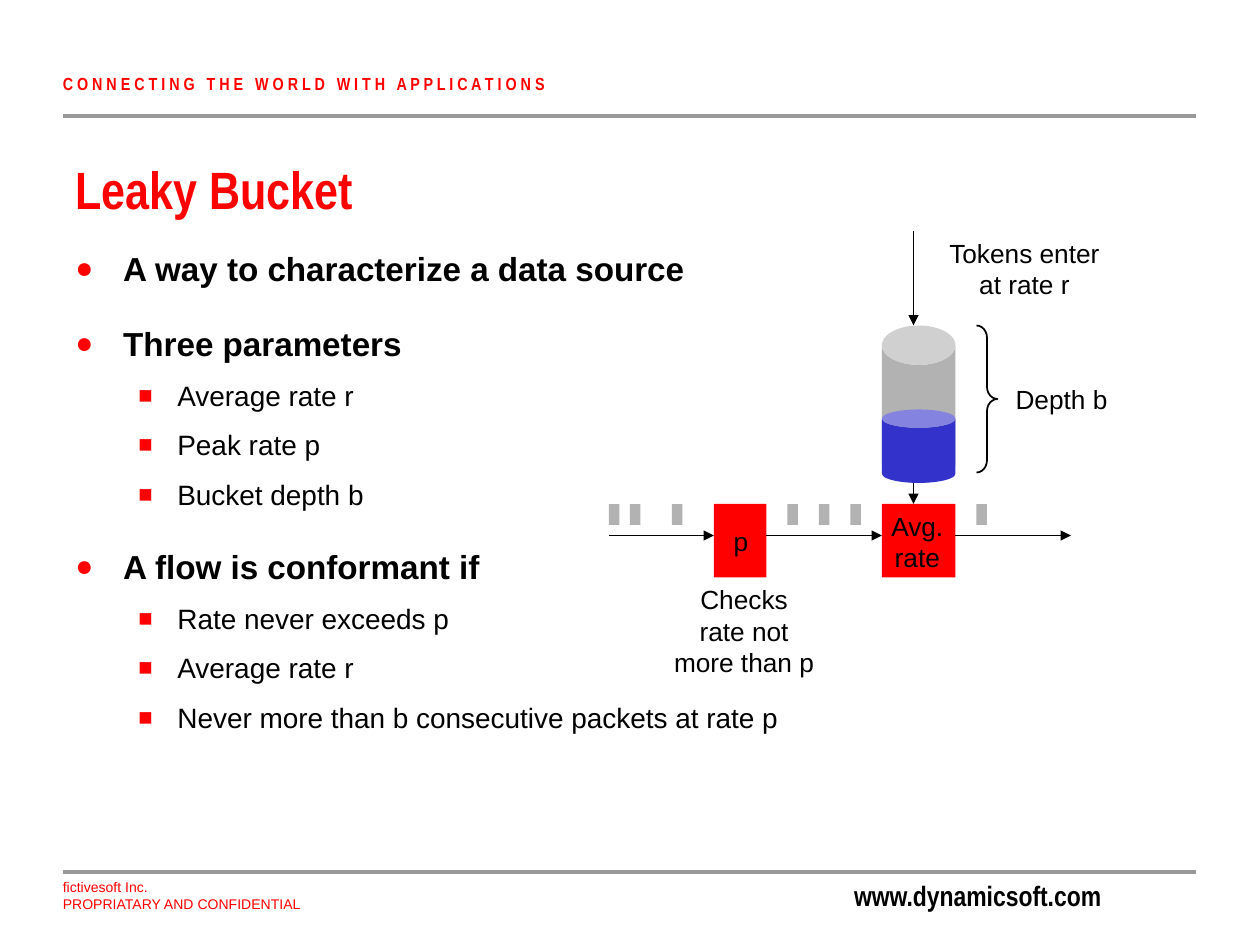
"""Leaky bucket slide: bullets on the left, token bucket diagram on the right."""
from lxml.etree import SubElement
from pptx import Presentation
from pptx.dml.color import RGBColor
from pptx.enum.shapes import MSO_CONNECTOR, MSO_SHAPE as SHAPE
from pptx.enum.text import MSO_ANCHOR as ANCHOR, PP_ALIGN as ALIGN
from pptx.oxml.ns import qn
from pptx.util import Inches, Pt

COLORS = {"red": "FF0000", "black": "000000", "rule": "999999",
          "gray": "B2B2B2", "blue": "3333CC"}
NARROW = "Arial Narrow"
UNIT = 1 / 12

TITLE = "Leaky Bucket"
SLOGAN = " ".join("CONNECTING THE WORLD WITH APPLICATIONS")
OWNER = "fictivesoft Inc.\vPROPRIATARY AND CONFIDENTIAL"
SITE = "www.dynamicsoft.com"
BULLETS = [
    ("A way to characterize a data source", []),
    ("Three parameters", ["Average rate r", "Peak rate p", "Bucket depth b"]),
    ("A flow is conformant if", [
        "Rate never exceeds p", "Average rate r",
        "Never more than b consecutive packets at rate p"]),
]
LEVELS = [
    dict(char="●", scale=90, margin=0.38, hang=0.38, size=19, bold=True, before=20),
    dict(char="■", scale=85, margin=0.81, hang=0.31, size=16, bold=False, before=9),
]

SHAPES = [
    (SHAPE.CAN, (84, 31, 7, 15), "gray", [0.536]),
    (SHAPE.CAN, (84, 39, 7, 7), "blue", [0.25]),
    (SHAPE.RIGHT_BRACE, (93, 31, 2, 14), None, [0.583, 0.5]),
    (SHAPE.RECTANGLE, (68, 48, 5, 7), "red", []),
    (SHAPE.RECTANGLE, (84, 48, 7, 7), "red", []),
]
PACKET_COLUMNS = [58, 60, 64, 75, 78, 81, 93]
PACKETS = [(SHAPE.RECTANGLE, (x, 48, 1, 2), "gray", []) for x in PACKET_COLUMNS]
ARROWS = [(87, 22, 87, 31), (87, 46, 87, 48),
          (58, 51, 68, 51), (73, 51, 84, 51), (91, 51, 102, 51)]
LABELS = [
    ("Tokens enter\vat rate r", (7.42, 1.83, 1.42, 0.6)),
    ("Depth b", (7.96, 2.99, 0.93, 0.35)),
    ("p", (5.67, 4, 0.42, 0.58)),
    ("Avg.\vrate", (6.92, 4, 0.72, 0.6)),
    ("Checks\vrate not\vmore than p", (5.25, 4.58, 1.31, 0.85)),
]


def rgb(name):
    return RGBColor.from_string(COLORS[name])


def write(p, text, size, color="black", font="Arial", bold=False, align=ALIGN.LEFT):
    p.text = text
    p.alignment = align
    for r in p.runs:
        r.font.size, r.font.name, r.font.bold = Pt(size), font, bold
        r.font.color.rgb = rgb(color)


def text_box(s, text, box, size, anchor=ANCHOR.MIDDLE, wrap=True, **style):
    tf = s.shapes.add_textbox(*map(Inches, box)).text_frame
    tf.word_wrap, tf.vertical_anchor = wrap, anchor
    write(tf.paragraphs[0], text, size, **style)
    return tf


def line(s, ends, color, width, arrow=False):
    c = s.shapes.add_connector(MSO_CONNECTOR.STRAIGHT, *map(Inches, ends))
    c.line.color.rgb, c.line.width = rgb(color), Pt(width)
    if arrow:
        SubElement(c.line._get_or_add_ln(), qn("a:tailEnd"), type="triangle")
    SubElement(c._element.spPr, qn("a:effectLst"))


def shape(s, kind, cells, fill, adjustments):
    sp = s.shapes.add_shape(kind, *(Inches(n * UNIT) for n in cells))
    sp.shadow.inherit = False
    for i, value in enumerate(adjustments):
        sp.adjustments[i] = value
    if fill:
        sp.fill.solid()
        sp.fill.fore_color.rgb = rgb(fill)
        sp.line.fill.background()
    else:
        sp.fill.background()
        sp.line.color.rgb, sp.line.width = rgb("black"), Pt(1)


def bullet(p, text, level):
    fmt = LEVELS[level]
    pPr = p._p.get_or_add_pPr()
    pPr.set("marL", str(Inches(fmt["margin"])))
    pPr.set("indent", str(-Inches(fmt["hang"])))
    SubElement(SubElement(pPr, qn("a:buClr")), qn("a:srgbClr"), val=COLORS["red"])
    SubElement(pPr, qn("a:buSzPct"), val=str(fmt["scale"] * 1000))
    SubElement(pPr, qn("a:buFont"), typeface="Arial")
    SubElement(pPr, qn("a:buChar"), char=fmt["char"])
    p.level = level
    write(p, text, fmt["size"], bold=fmt["bold"])


def main():
    prs = Presentation()
    prs.slide_width, prs.slide_height = Inches(10), Inches(7.5)
    s = prs.slides.add_slide(prs.slide_layouts[5])

    title = s.shapes.title
    title.left, title.top, title.width, title.height = map(Inches, (0.5, 1.08, 9, 0.83))
    title.text_frame.vertical_anchor = ANCHOR.MIDDLE
    write(title.text_frame.paragraphs[0], TITLE, 30, color="red", font=NARROW, bold=True)

    text_box(s, SITE, (6.68, 6.92, 2.33, 0.37), 16, anchor=ANCHOR.TOP, font=NARROW, bold=True)
    text_box(s, OWNER, (0.4, 6.92, 5.58, 0.37), 8, color="red")
    text_box(s, SLOGAN, (0.4, 0.53, 5.58, 0.27), 10, color="red", font=NARROW, bold=True)
    for y in (0.92, 6.92):
        line(s, (0.5, y, 9.49, y), "rule", 2.25)

    items = [(text, level) for head, subs in BULLETS
             for text, level in [(head, 0), *((sub, 1) for sub in subs)]]
    tf = text_box(s, "", (0.5, 1.92, 5.9, 4.83), 19, anchor=ANCHOR.TOP)
    for i, (text, level) in enumerate(items):
        p = tf.add_paragraph() if i else tf.paragraphs[0]
        bullet(p, text, level)
        if i:
            p.space_before = Pt(LEVELS[level]["before"])

    for spec_row in SHAPES + PACKETS:
        shape(s, *spec_row)
    for ends in ARROWS:
        line(s, [n * UNIT for n in ends], "black", 1, arrow=True)
    for text, box in LABELS:
        text_box(s, text, box, 15, wrap=False, align=ALIGN.CENTER)

    prs.save("out.pptx")


if __name__ == "__main__":
    main()
